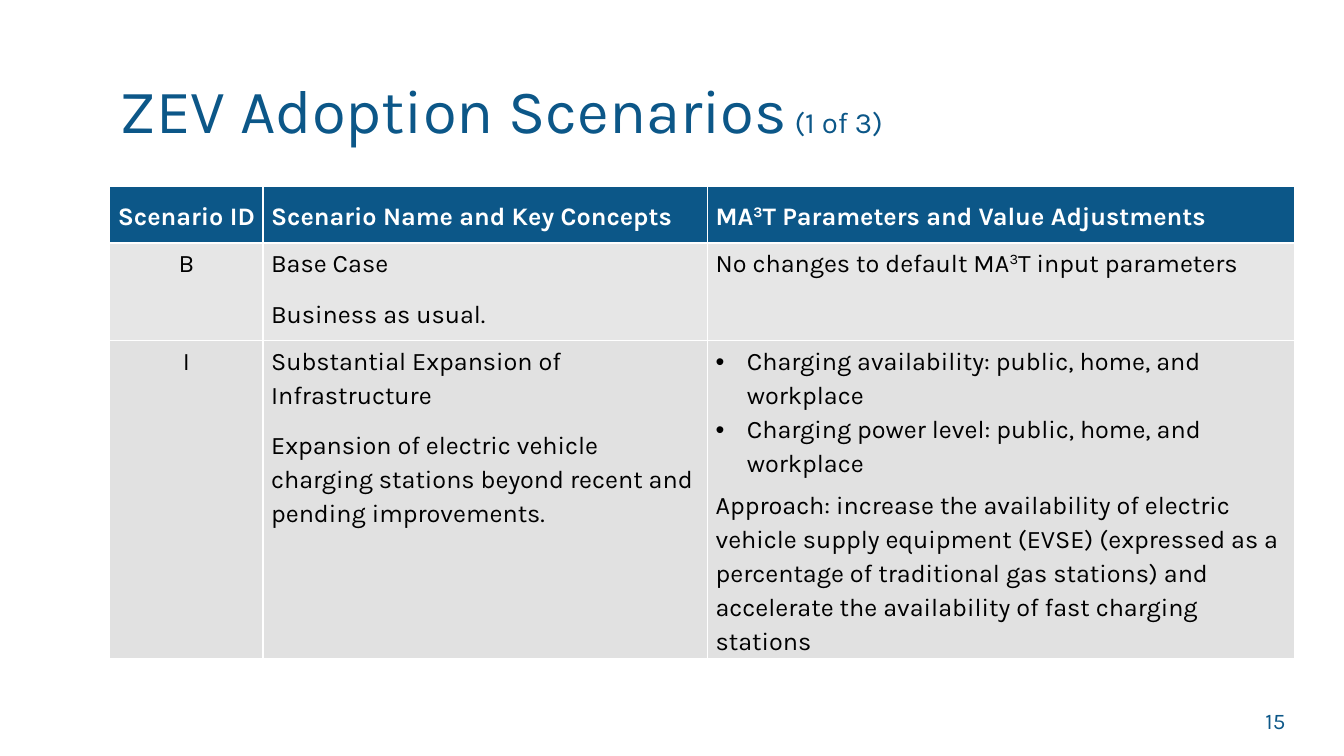
from dataclasses import dataclass

from lxml.etree import SubElement
from pptx import Presentation
from pptx.dml.color import RGBColor
from pptx.enum.text import MSO_ANCHOR as Anchor, MSO_AUTO_SIZE as AutoSize, PP_ALIGN as Align
from pptx.oxml.ns import qn
from pptx.util import Inches, Pt

COLORS = {"blue": "0C5788", "white": "FFFFFF", "black": "000000",
          "light": "E6E6E6", "gray": "E1E1E1"}
FONT = "Karla"

# Grid of 160 columns by 90 rows
WIDTH, HEIGHT = Inches(13.33), Inches(7.5)
COLUMN, ROW = WIDTH / 160, HEIGHT / 90
LEFT_EDGE = 13.08
TITLE_TOP, TABLE_TOP = 4.8, 22.2
COLUMN_SPANS = (18.24, 52.92, 69.84)
BULLET_INDENT = 3.72


@dataclass(frozen=True)
class Entry:
    """A cell paragraph; text between ^ signs is superscript."""
    text: str
    bullet: bool = False


@dataclass(frozen=True)
class TableRow:
    span: float
    fill: str
    cells: tuple[tuple[Entry, ...], ...]
    header: bool = False


ROWS = (
    TableRow(6.72, "blue", (
        (Entry("Scenario ID"),),
        (Entry("Scenario Name and Key Concepts"),),
        (Entry("MA^3^T Parameters and Value Adjustments"),),
    ), header=True),
    TableRow(11.64, "light", (
        (Entry("B"),),
        (Entry("Base Case"), Entry("Business as usual.")),
        (Entry("No changes to default MA^3^T input parameters"),),
    )),
    TableRow(36.72, "gray", (
        (Entry("I"),),
        (Entry("Substantial Expansion of Infrastructure"),
         Entry("Expansion of electric vehicle charging stations beyond recent "
               "and pending improvements.")),
        (Entry("Charging availability: public, home, and workplace", bullet=True),
         Entry("Charging power level: public, home, and workplace", bullet=True),
         Entry("Approach: increase the availability of electric vehicle supply "
               "equipment (EVSE) (expressed as a percentage of traditional gas "
               "stations) and accelerate the availability of fast charging stations")),
    )),
)


def across(columns: float) -> int:
    return round(columns * COLUMN)


def down(rows: float) -> int:
    return round(rows * ROW)


def style(span, size: float, color: str, bold: bool = False) -> None:
    span.font.name, span.font.size, span.font.bold = FONT, Pt(size), bold
    span.font.color.rgb = RGBColor.from_string(COLORS[color])


def add_bullet(para) -> None:
    properties = para._p.get_or_add_pPr()
    properties.set("marL", str(across(BULLET_INDENT)))
    properties.set("indent", str(-across(BULLET_INDENT)))
    SubElement(properties, qn("a:buFont"), typeface="Arial")
    SubElement(properties, qn("a:buChar"), char="•")


def add_borders(cell) -> None:
    properties = cell._tc.get_or_add_tcPr()
    for side in ("lnL", "lnR", "lnT", "lnB"):
        line = SubElement(properties, qn(f"a:{side}"), w=str(Pt(1)))
        fill = SubElement(line, qn("a:solidFill"))
        SubElement(fill, qn("a:srgbClr"), val=COLORS["white"])


def write_entry(para, entry: Entry, first: bool, header: bool) -> None:
    if entry.bullet:
        add_bullet(para)
    else:
        para.space_before = Pt(0 if first else 6)
        para.space_after = Pt(6)
    para.line_spacing = 1.15
    for index, piece in enumerate(entry.text.split("^")):
        span = para.add_run()
        span.text = piece
        style(span, 18, "white" if header else "black", header)
        if index % 2:
            span._r.get_or_add_rPr().set("baseline", "30000")


def fill_cell(cell, entries: tuple[Entry, ...], row: TableRow, centered: bool) -> None:
    add_borders(cell)
    cell.fill.solid()
    cell.fill.fore_color.rgb = RGBColor.from_string(COLORS[row.fill])
    cell.margin_left = cell.margin_right = Inches(0.08)
    cell.margin_top = cell.margin_bottom = Inches(0.02)
    cell.vertical_anchor = Anchor.MIDDLE if row.header else Anchor.TOP
    frame = cell.text_frame
    for index, entry in enumerate(entries):
        para = frame.add_paragraph() if index else frame.paragraphs[0]
        para.alignment = Align.CENTER if centered else Align.LEFT
        write_entry(para, entry, index == 0, row.header)


def add_title(page) -> None:
    title = page.shapes.title
    title.left, title.top = across(LEFT_EDGE), down(TITLE_TOP)
    title.width, title.height = WIDTH - title.left, down(TABLE_TOP - TITLE_TOP)
    frame = title.text_frame
    frame.auto_size, frame.vertical_anchor = AutoSize.NONE, Anchor.MIDDLE
    para = frame.paragraphs[0]
    para.alignment, para.line_spacing = Align.LEFT, 0.9
    for text, size in (("ZEV Adoption Scenarios", 44), (" ", 20), ("(1 of 3)", 21)):
        span = para.add_run()
        span.text = text
        style(span, size, "blue")


def add_scenarios(page) -> None:
    table = page.shapes.add_table(
        len(ROWS), len(COLUMN_SPANS), across(LEFT_EDGE), down(TABLE_TOP),
        across(sum(COLUMN_SPANS)), down(sum(row.span for row in ROWS))).table
    table.horz_banding = False
    for column, span in zip(table.columns, COLUMN_SPANS):
        column.width = across(span)
    for row_index, row in enumerate(ROWS):
        table.rows[row_index].height = down(row.span)
        for index, entries in enumerate(row.cells):
            centered = index == 0 and not row.header
            fill_cell(table.cell(row_index, index), entries, row, centered)


def add_page_number(page) -> None:
    box = page.shapes.add_textbox(across(118.2), down(83.4), across(36), down(4.8))
    frame = box.text_frame
    frame.word_wrap, frame.vertical_anchor = True, Anchor.MIDDLE
    frame.text = "15"
    para = frame.paragraphs[0]
    para.alignment = Align.RIGHT
    style(para.runs[0], 16, "blue")


def main() -> None:
    deck = Presentation()
    deck.slide_width, deck.slide_height = WIDTH, HEIGHT
    page = deck.slides.add_slide(deck.slide_layouts[5])  # Title Only
    add_title(page)
    add_scenarios(page)
    add_page_number(page)
    deck.save("out.pptx")


if __name__ == "__main__":
    main()
